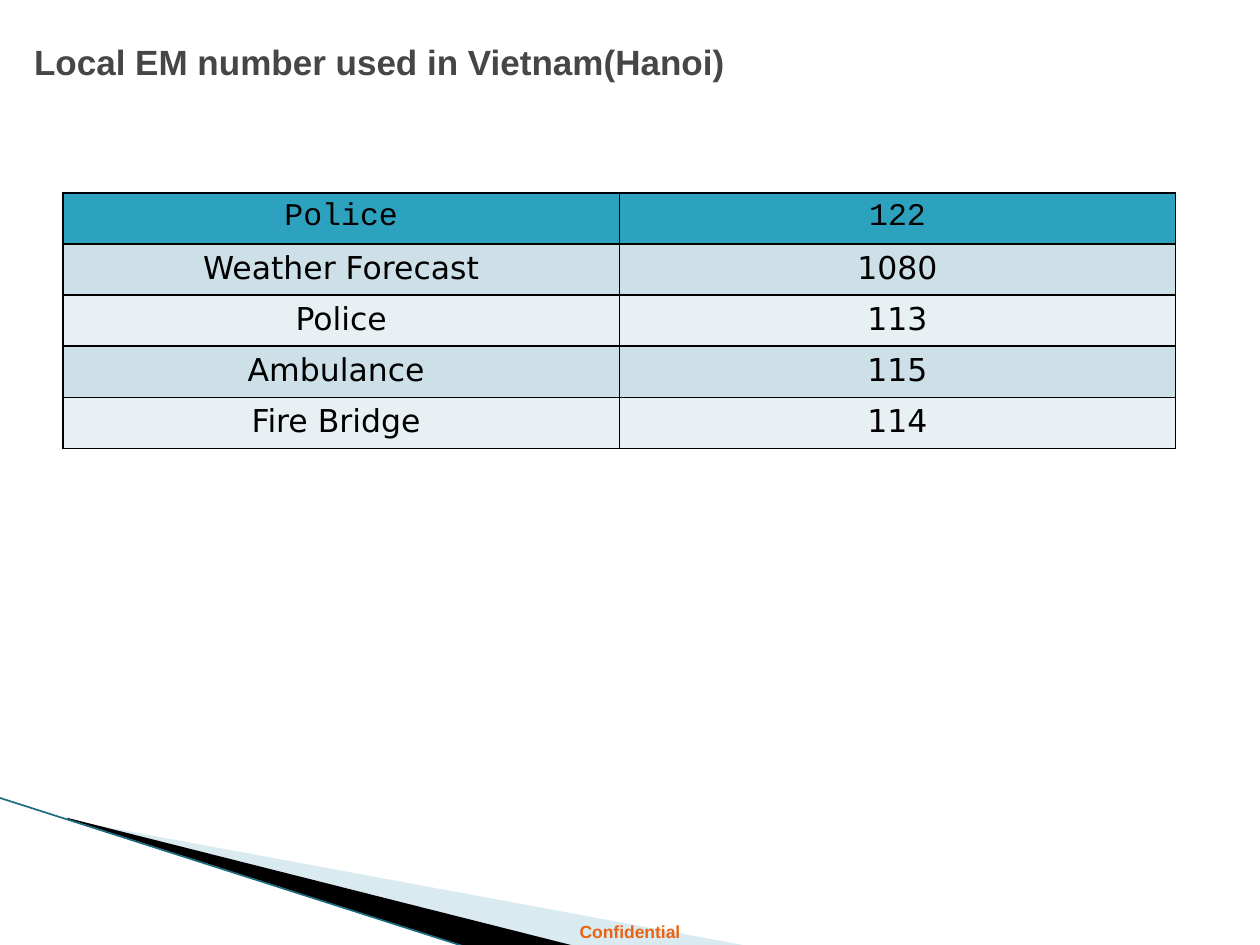
from lxml import etree
from pptx import Presentation
from pptx.dml.color import RGBColor
from pptx.enum import shapes, text
from pptx.oxml import ns
from pptx.util import Inches, Pt

BLACK = RGBColor(0x00, 0x00, 0x00)
GREY = RGBColor(0x46, 0x46, 0x46)
ORANGE = RGBColor(0xEB, 0x63, 0x12)
TEAL = RGBColor(0x2D, 0xA2, 0xBF)
DEEP = RGBColor(0x1C, 0x6C, 0x80)
PALE = RGBColor(0xA0, 0xCB, 0xDC)
BANDS = [RGBColor(0xE8, 0xF0, 0xF4), RGBColor(0xCD, 0xE0, 0xE8)]
ROWS = [
    ("Police", "122"),
    ("Weather Forecast", "1080"),
    ("Police", "113"),
    ("Ambulance ", "115"),
    ("Fire Bridge ", "114"),
]


def style(item, color, **values):
    """Set font values and colour on a paragraph."""
    for name, value in values.items():
        setattr(item.font, name, value)
    item.font.color.rgb = color


def add_sub(parent, tag, **attrs):
    """Add a drawing element under a parent."""
    return etree.SubElement(parent, ns.qn(tag), attrs)


def add_wedge(slide, left, top, points, color, alpha=None):
    """Draw a filled wedge with points relative to its left top corner."""
    spots = [(Inches(left + x), Inches(top + y)) for x, y in points]
    form = slide.shapes.build_freeform(*spots[0])
    form.add_line_segments(spots[1:], close=True)
    wedge = form.convert_to_shape()
    wedge.shadow.inherit = False
    wedge.fill.solid()
    wedge.fill.fore_color.rgb = color
    wedge.line.fill.background()
    if alpha:
        tone = wedge.fill._xPr.find(".//" + ns.qn("a:srgbClr"))
        add_sub(tone, "a:alpha", val=str(alpha * 1000))


def add_corner(slide, left, top):
    """Draw the swoosh in the lower left corner."""
    add_wedge(slide, left + 0.55, top + 0.17,
              [(0, 0.01), (5.4, 1.01), (4.01, 1.01), (0, 0)], PALE, 40)
    add_wedge(slide, left + 0.53, top + 0.16,
              [(0, 0), (4.04, 1.02), (3.19, 1.03), (0.01, 0.01)], BLACK)
    edge = slide.shapes.add_connector(
        shapes.MSO_CONNECTOR.STRAIGHT, Inches(left - 0.01), Inches(top),
        Inches(left + 3.71), Inches(top + 1.19))
    edge.line.color.rgb = DEEP
    edge.line.width = Pt(0.95)
    add_sub(edge._element.spPr, "a:effectLst")


def add_footer(slide, left, top, width, height):
    """Place the centred footer."""
    box = slide.shapes.add_textbox(*map(Inches, (left, top, width, height)))
    box.text_frame.word_wrap = True
    para = box.text_frame.paragraphs[0]
    para.text = "Confidential"
    para.alignment = text.PP_ALIGN.CENTER
    style(para, ORANGE, name="Arial", size=Pt(10), bold=True)


def set_title(slide, left, top, width, height):
    """Fill and format the title placeholder."""
    title = slide.shapes.title
    place = dict(left=left, top=top, width=width, height=height)
    for name, value in place.items():
        setattr(title, name, Inches(value))
    frame = title.text_frame
    frame.vertical_anchor = text.MSO_ANCHOR.TOP
    frame.margin_top = Inches(0.15)
    para = frame.paragraphs[0]
    para.text = "Local EM number used in Vietnam(Hanoi)"
    para.alignment = text.PP_ALIGN.LEFT
    style(para, GREY, name="Arial", size=Pt(20), bold=True)


def set_cell(cell, words, fill, face):
    """Fill one table cell and draw its borders."""
    props = cell._tc.get_or_add_tcPr()
    for side in "LRTB":
        line = add_sub(props, "a:ln" + side, w=str(Pt(1)))
        add_sub(add_sub(line, "a:solidFill"), "a:srgbClr", val=str(BLACK))
    cell.fill.solid()
    cell.fill.fore_color.rgb = fill
    para = cell.text_frame.paragraphs[0]
    para.text = words
    para.alignment = text.PP_ALIGN.CENTER
    style(para, BLACK, name=face, size=Pt(18), bold=False)


def add_numbers(slide, left, top, width, height):
    """Place the table of emergency numbers."""
    frame = slide.shapes.add_table(
        len(ROWS), 2, *map(Inches, (left, top, width, height)))
    for r, row in enumerate(ROWS):
        fill = BANDS[r % 2] if r else TEAL
        face = "DejaVu Sans" if r else "Courier New"
        for c, words in enumerate(row):
            set_cell(frame.table.cell(r, c), words, fill, face)


def main():
    """Build and save the slide."""
    deck = Presentation()
    deck.slide_width, deck.slide_height = Inches(10), Inches(7.5)
    slide = deck.slides.add_slide(deck.slide_layouts[5])
    add_corner(slide, 0, 6.33)
    add_footer(slide, 0, 7.26, 10, 0.27)
    set_title(slide, 0.17, 0.17, 9, 2)
    add_numbers(slide, 0.5, 1.53, 8.83, 2.03)
    deck.save("out.pptx")


if __name__ == "__main__":
    main()
